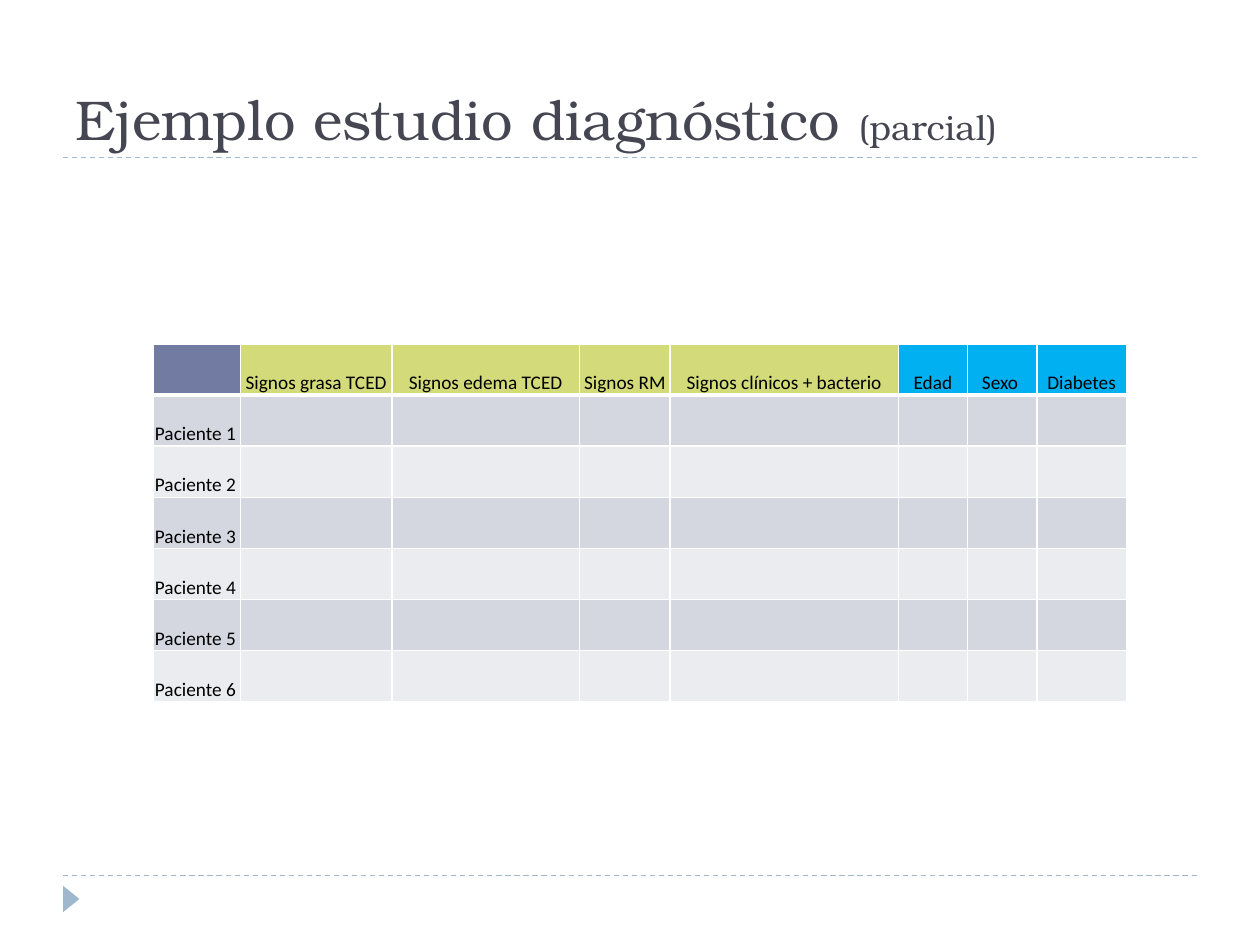
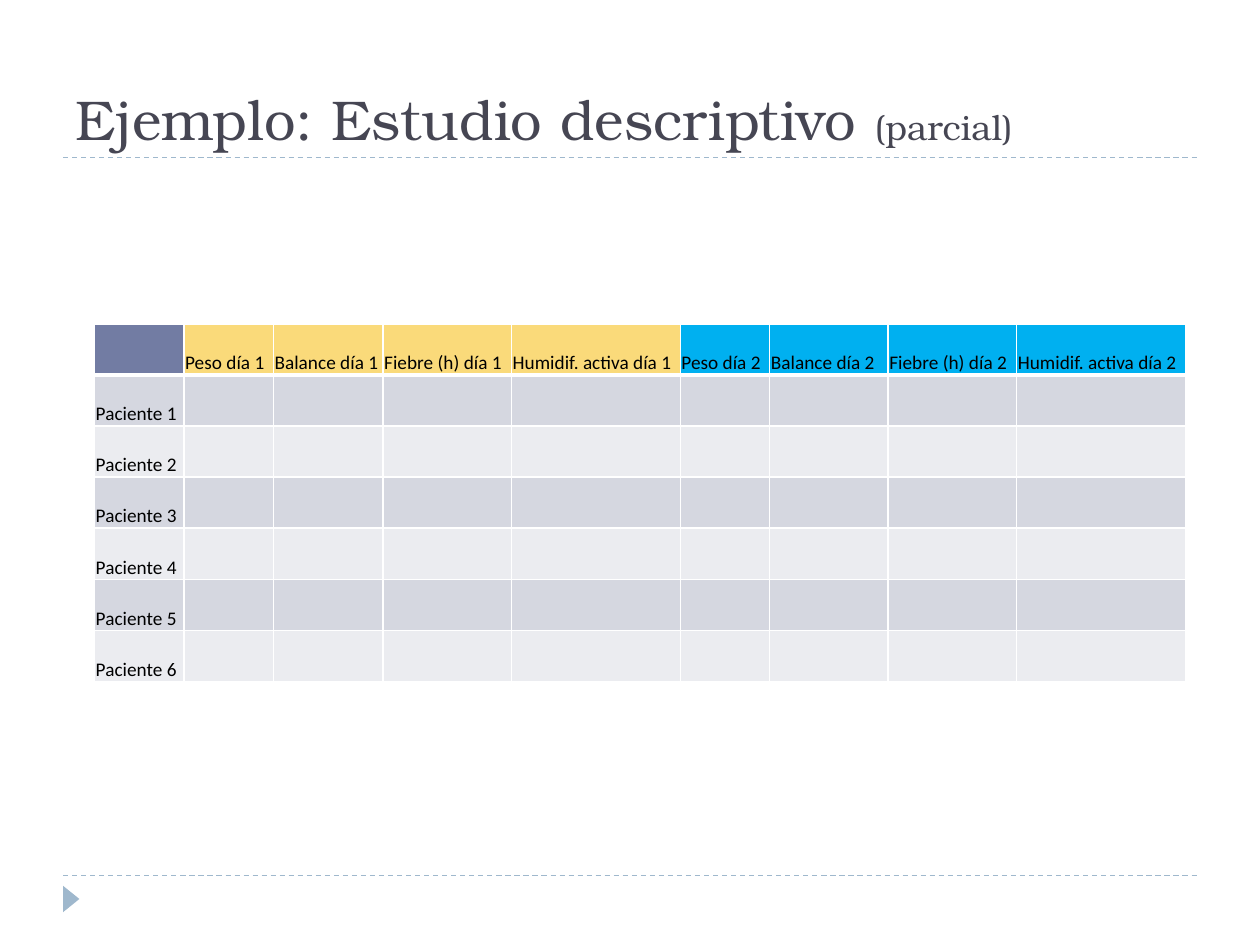
from lxml.etree import SubElement
from pptx import Presentation
from pptx.dml.color import RGBColor
from pptx.enum.dml import MSO_LINE
from pptx.enum.shapes import MSO_CONNECTOR, MSO_SHAPE
from pptx.enum.text import MSO_ANCHOR, PP_ALIGN
from pptx.oxml.ns import qn
from pptx.util import Inches, Pt

INK = RGBColor(0x46, 0x46, 0x53)
BLACK = RGBColor(0, 0, 0)
WHITE = RGBColor(0xFF, 0xFF, 0xFF)
MIST = RGBColor(0x9F, 0xB8, 0xCD)
SLATE = RGBColor(0x72, 0x7C, 0xA3)
LIME = RGBColor(0xD2, 0xDA, 0x7A)
GOLD = RGBColor(0xFA, 0xDA, 0x7A)
BLUE = RGBColor(0x00, 0xB0, 0xF0)
BANDS = (RGBColor(0xD5, 0xD7, 0xE0), RGBColor(0xEB, 0xEC, 0xF0))
SERIF, SANS = "TeX Gyre Bonum", "Calibri"

# Content: each head is (text, fill, width in inches)
ROWS = [f"Paciente {n}" for n in range(1, 7)]
SLIDES = [
    {
        "title": "Ejemplo estudio diagnóstico ",
        "at": (1.22, 2.73),
        "align": PP_ALIGN.CENTER,
        "heads": [
            ("", SLATE, 0.69),
            ("Signos grasa TCED", LIME, 1.2),
            ("Signos edema TCED", LIME, 1.49),
            ("Signos RM", LIME, 0.72),
            ("Signos clínicos + bacterio", LIME, 1.81),
            ("Edad", BLUE, 0.55),
            ("Sexo ", BLUE, 0.55),
            ("Diabetes", BLUE, 0.71),
        ],
    },
    {
        "title": "Ejemplo: Estudio descriptivo ",
        "at": (0.75, 2.57),
        "align": PP_ALIGN.LEFT,
        "heads": [
            ("", SLATE, 0.71),
            ("Peso día 1", GOLD, 0.71),
            ("Balance día 1", GOLD, 0.87),
            ("Fiebre (h) día 1", GOLD, 1.02),
            ("Humidif. activa día 1", GOLD, 1.34),
            ("Peso día 2", BLUE, 0.71),
            ("Balance día 2", BLUE, 0.94),
            ("Fiebre (h) día 2", BLUE, 1.02),
            ("Humidif. activa día 2", BLUE, 1.34),
        ],
    },
]
NOTE = "(parcial)"
TALL = 2.84  # table height


def add_run(para, text, size, face, color):
    run = para.add_run()
    run.text = text
    run.font.size = Pt(size)
    run.font.name = face
    run.font.color.rgb = color


def add_rule(slide, y):
    rule = slide.shapes.add_connector(
        MSO_CONNECTOR.STRAIGHT, Inches(0.5), Inches(y), Inches(9.5), Inches(y))
    rule.line.color.rgb = MIST
    rule.line.width = Pt(0.75)
    rule.line.dash_style = MSO_LINE.DASH
    SubElement(rule._element.spPr, qn("a:effectLst"))


def add_frame(slide, title):
    # Dashed rules and corner mark
    for y in (6.95, 1.25):
        add_rule(slide, y)
    mark = slide.shapes.add_shape(
        MSO_SHAPE.ISOSCELES_TRIANGLE,
        Inches(0.46), Inches(7.07), Inches(0.21), Inches(0.13))
    mark.rotation = 90
    mark.shadow.inherit = False
    mark.fill.solid()
    mark.fill.fore_color.rgb = MIST
    mark.line.fill.background()
    # Title
    box = slide.shapes.add_textbox(
        Inches(0.5), Inches(0.17), Inches(9), Inches(1.08))
    frame = box.text_frame
    frame.word_wrap = True
    frame.vertical_anchor = MSO_ANCHOR.BOTTOM
    para = frame.paragraphs[0]
    add_run(para, title, 32, SERIF, INK)
    add_run(para, NOTE, 20, SERIF, INK)


def add_edges(cell, top, base):
    # Borders go in before the fill, as the schema asks
    props = cell._tc.get_or_add_tcPr()
    for side, width in (("L", 1), ("R", 1), ("T", top), ("B", base)):
        edge = SubElement(props, qn(f"a:ln{side}"), w=str(Pt(width)))
        fill = SubElement(edge, qn("a:solidFill"))
        SubElement(fill, qn("a:srgbClr"), val=str(WHITE))


def set_cell(cell, text, fill, align, top=1, base=1):
    add_edges(cell, top, base)
    cell.fill.solid()
    cell.fill.fore_color.rgb = fill
    cell.vertical_anchor = MSO_ANCHOR.BOTTOM
    cell.margin_left = cell.margin_right = cell.margin_top = Inches(0.01)
    cell.margin_bottom = 0
    para = cell.text_frame.paragraphs[0]
    para.alignment = align
    if text:
        add_run(para, text, 11, SANS, BLACK)


def add_grid(slide, at, heads, align):
    left, top = at
    wide = sum(head[2] for head in heads)
    count = len(ROWS) + 1
    grid = slide.shapes.add_table(
        count, len(heads), Inches(left), Inches(top),
        Inches(wide), Inches(TALL)).table
    for row in grid.rows:
        row.height = Inches(TALL / count)
    for col, (text, fill, width) in enumerate(heads):
        grid.columns[col].width = Inches(width)
        set_cell(grid.cell(0, col), text, fill, align, base=3)
        for row, name in enumerate(ROWS):
            set_cell(grid.cell(row + 1, col), "" if col else name,
                     BANDS[row % 2], PP_ALIGN.LEFT, top=1 if row else 3)


def main():
    deck = Presentation()
    deck.slide_width, deck.slide_height = Inches(10), Inches(7.5)
    for data in SLIDES:
        slide = deck.slides.add_slide(deck.slide_layouts[6])
        add_frame(slide, data["title"])
        add_grid(slide, data["at"], data["heads"], data["align"])
    deck.save("out.pptx")


if __name__ == "__main__":
    main()
